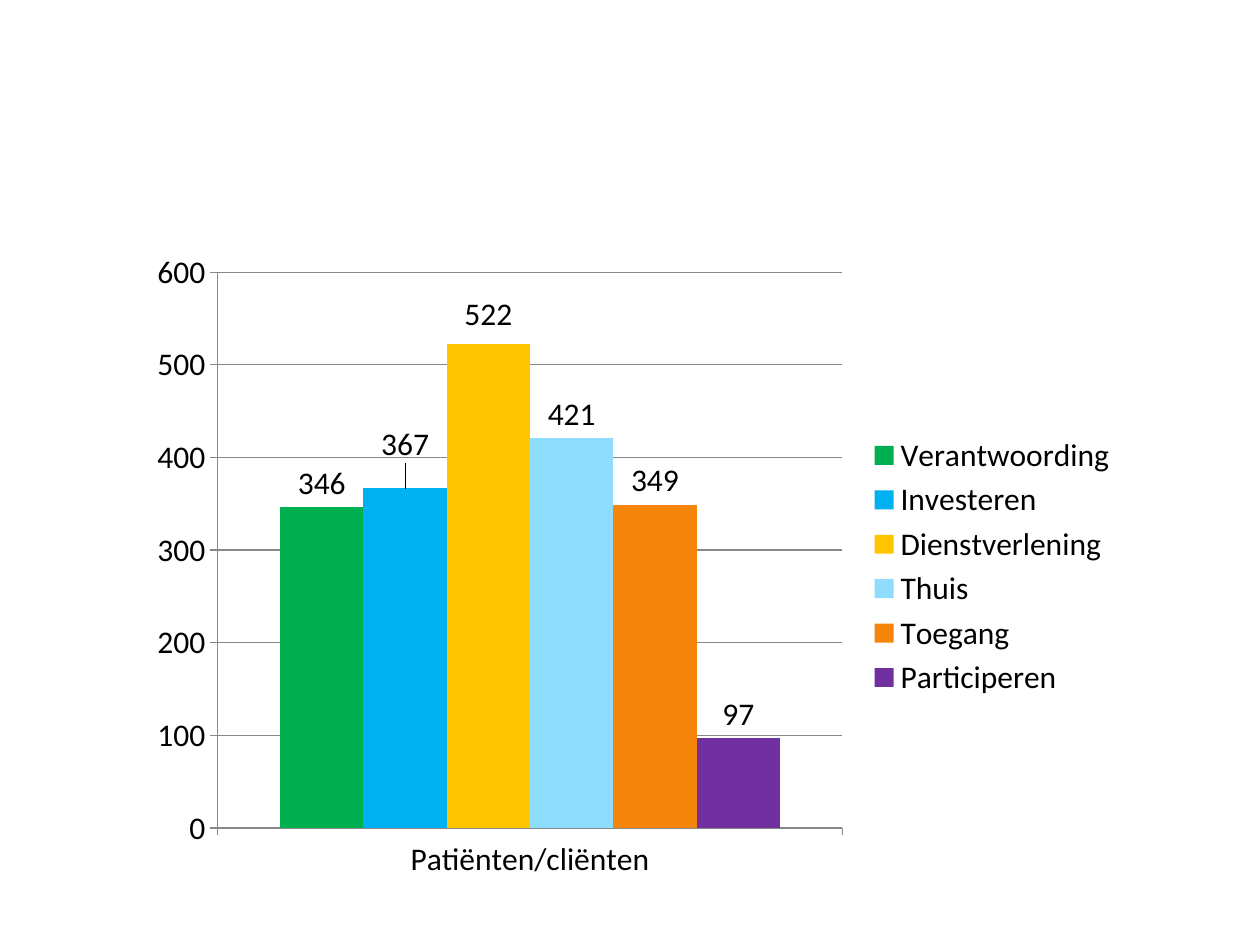
from lxml import etree
from pptx import Presentation
from pptx.chart.data import CategoryChartData
from pptx.dml.color import RGBColor
from pptx.enum import chart as ch
from pptx.oxml.ns import qn
from pptx.util import Cm, Pt

CATEGORY = "Patiënten/cliënten"
THEMES = [  # name, value, colour
    ("Verantwoording", 346, "green"),
    ("Investeren", 367, "blue"),
    ("Dienstverlening", 522, "yellow"),
    ("Thuis", 421, "pale blue"),
    ("Toegang", 349, "orange"),
    ("Participeren", 97, "purple"),
]
RAISED_LABELS = {"Investeren": -0.03, "Dienstverlening": -0.01}  # share of chart height
PLOT_AREA = {"x": 0.08, "y": 0.05, "w": 0.63, "h": 0.85}  # shares of the chart
COLORS = {
    "green": "00B050",
    "blue": "00B0F0",
    "yellow": "FFC600",
    "pale blue": "8EDDFF",
    "orange": "F5860B",
    "purple": "7030A0",
    "text": "000000",
    "line": "878787",
}


def color(name):
    return RGBColor.from_string(COLORS[name])


def make_layout(settings):
    """Return a c:layout element with the given manual settings."""
    layout = etree.Element(qn("c:layout"))
    manual = etree.SubElement(layout, qn("c:manualLayout"))
    for tag, value in settings.items():
        etree.SubElement(manual, qn(f"c:{tag}")).set("val", str(value))
    return layout


def style_line(line):
    line.color.rgb = color("line")
    line.width = Pt(0.75)


def style_axes(chart):
    for axis in (chart.category_axis, chart.value_axis):
        axis.major_tick_mark = ch.XL_TICK_MARK.OUTSIDE
        axis.minor_tick_mark = ch.XL_TICK_MARK.NONE
        style_line(axis.format.line)
    chart.category_axis.has_major_gridlines = False
    values = chart.value_axis
    values.minimum_scale, values.maximum_scale, values.major_unit = 0, 600, 100
    values.has_major_gridlines = True
    style_line(values.major_gridlines.format.line)


def style_series(series, color_name):
    series.format.fill.solid()
    series.format.fill.fore_color.rgb = color(color_name)
    series.invert_if_negative = False
    labels = series.data_labels
    labels.show_value = True
    labels.position = ch.XL_LABEL_POSITION.OUTSIDE_END
    if series.name in RAISED_LABELS:
        label = series.points[0].data_label
        label.position = ch.XL_LABEL_POSITION.OUTSIDE_END
        index = series._element.find(f".//{qn('c:dLbl')}/{qn('c:idx')}")
        index.addnext(make_layout({"x": 0, "y": RAISED_LABELS[series.name]}))


def place_plot(chart):
    plot_area = chart._chartSpace.find(f".//{qn('c:plotArea')}")
    for old in plot_area.findall(qn("c:layout")):
        plot_area.remove(old)
    modes = {"layoutTarget": "inner", "xMode": "edge", "yMode": "edge"}
    plot_area.insert(0, make_layout({**modes, **PLOT_AREA}))


def main():
    presentation = Presentation()
    presentation.slide_width, presentation.slide_height = Cm(25.4), Cm(19.05)
    slide = presentation.slides.add_slide(presentation.slide_layouts[6])

    data = CategoryChartData()
    data.categories = [CATEGORY]
    for name, value, _ in THEMES:
        data.add_series(name, [value])
    chart = slide.shapes.add_chart(
        ch.XL_CHART_TYPE.COLUMN_CLUSTERED,
        Cm(2.79), Cm(4.83), Cm(19.99), Cm(13.18), data,
    ).chart

    chart.has_title = False
    chart.font.name = "Calibri"
    chart.font.size = Pt(18)
    chart.font.color.rgb = color("text")
    chart.has_legend = True
    chart.legend.position = ch.XL_LEGEND_POSITION.RIGHT
    chart.legend.include_in_layout = False

    plot = chart.plots[0]
    plot.gap_width = 150
    plot.overlap = 0
    plot.vary_by_categories = False
    for series, (_, _, color_name) in zip(plot.series, THEMES):
        style_series(series, color_name)
    style_axes(chart)
    place_plot(chart)

    presentation.save("out.pptx")


if __name__ == "__main__":
    main()
